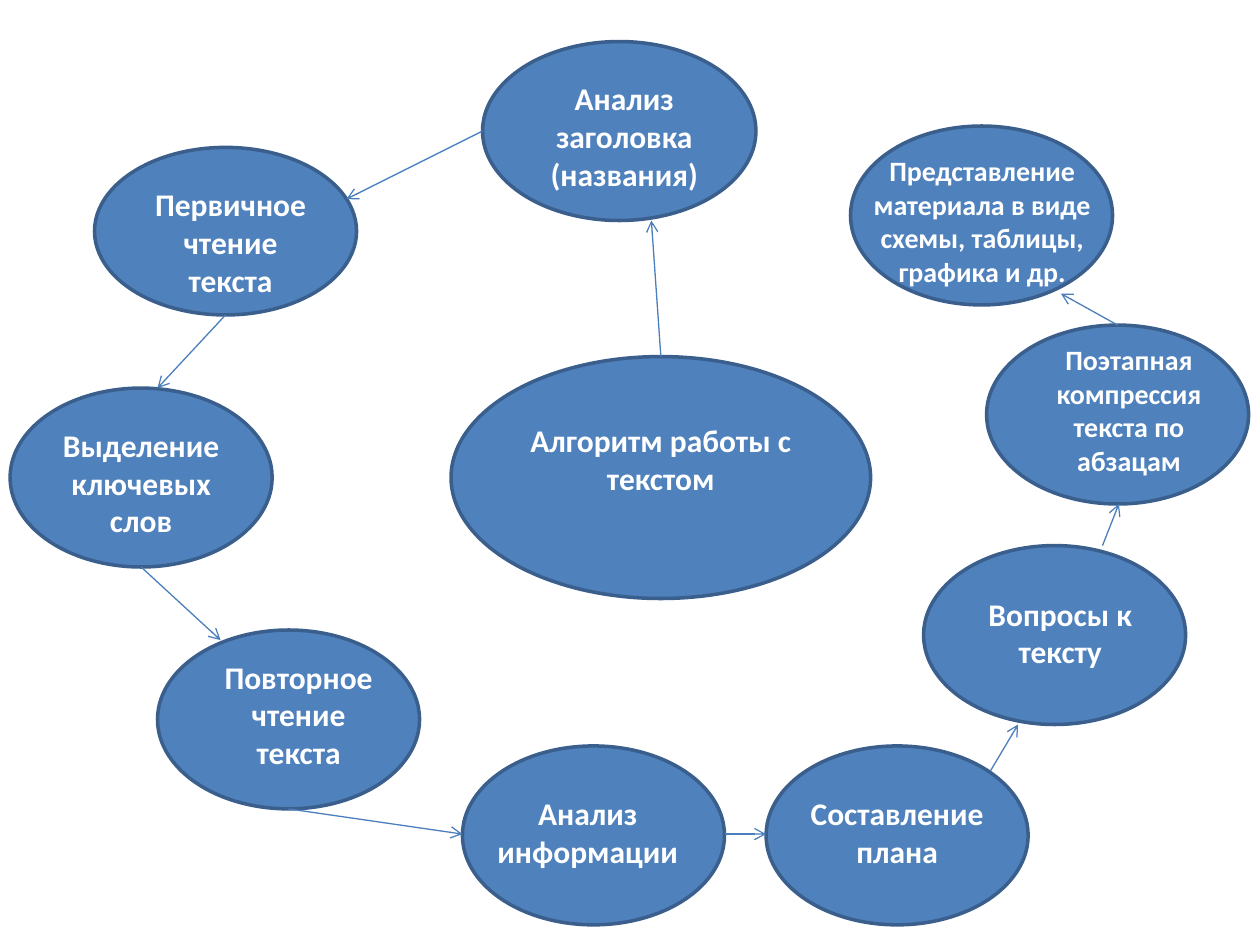
from dataclasses import dataclass

from lxml import etree
from pptx import Presentation
from pptx.dml.color import RGBColor
from pptx.enum.shapes import MSO_CONNECTOR as Connector, MSO_SHAPE as Shape
from pptx.enum.text import MSO_ANCHOR as Anchor, MSO_AUTO_SIZE as AutoSize, PP_ALIGN as Align
from pptx.oxml.ns import qn
from pptx.util import Inches, Pt


@dataclass(frozen=True)
class Theme:
    font: str = "Calibri"
    text: str = "FFFFFF"
    fill: str = "4F81BD"
    outline: str = "3A5F8C"
    arrow: str = "4B7EBC"
    outline_width: float = 2
    arrow_width: float = 0.75
    body: int = 18
    small: int = 16


class AlgorithmSlide:
    TOP_SITE = 0

    def __init__(self, deck, theme):
        self.theme = theme
        self.slide = deck.slides.add_slide(deck.slide_layouts[6])

    def _format(self, target, values):
        for name, value in values.items():
            setattr(target, name, value)

    def _stroke(self, line, color, width):
        line.color.rgb = RGBColor.from_string(color)
        line.width = Pt(width)

    def add_wording(self, frame, wording, size, **frame_format):
        self._format(frame, {"word_wrap": True, **frame_format})
        paragraph = frame.paragraphs[0]
        paragraph.alignment = Align.CENTER
        run = paragraph.add_run()
        run.text = wording
        self._format(run.font, {"name": self.theme.font, "size": Pt(size), "bold": True})
        run.font.color.rgb = RGBColor.from_string(self.theme.text)

    def ellipse(self, *box):
        oval = self.slide.shapes.add_shape(Shape.OVAL, *map(Inches, box))
        oval.shadow.inherit = False
        oval.fill.solid()
        oval.fill.fore_color.rgb = RGBColor.from_string(self.theme.fill)
        self._stroke(oval.line, self.theme.outline, self.theme.outline_width)
        return oval

    def label(self, wording, box, size):
        caption = self.slide.shapes.add_textbox(*map(Inches, box))
        self.add_wording(caption.text_frame, wording, size,
                         auto_size=AutoSize.SHAPE_TO_FIT_TEXT)

    def arrow(self, start, end, top_of=None):
        link = self.slide.shapes.add_connector(
            Connector.STRAIGHT, *map(Inches, (*start, *end)))
        if top_of is not None:
            link.begin_connect(top_of, self.TOP_SITE)
        self._stroke(link.line, self.theme.arrow, self.theme.arrow_width)
        properties = link._element.spPr
        etree.SubElement(properties.find(qn("a:ln")), qn("a:tailEnd"), type="arrow")
        etree.SubElement(properties, qn("a:effectLst"))


def main():
    theme = Theme()
    deck = Presentation()
    deck.slide_width, deck.slide_height = Inches(10), Inches(7.5)
    page = AlgorithmSlide(deck, theme)

    # Central topic, its text lifted by one line
    topic = page.ellipse(3.58, 2.83, 3.33, 1.92)
    page.add_wording(topic.text_frame, "Алгоритм работы с текстом", theme.body,
                     vertical_anchor=Anchor.MIDDLE, margin_bottom=Inches(0.35))

    # Steps: wording, ellipse position, label box, type size
    steps = [
        ("Анализ заголовка (названия)", (3.83, 0.33), (4.08, 0.58, 1.75, 1.01), theme.body),
        ("Первичное чтение текста", (0.75, 1.17), (1.08, 1.42, 1.5, 1.01), theme.body),
        ("Выделение ключевых слов", (0.08, 3.08), (0.33, 3.33, 1.58, 1.01), theme.body),
        ("Повторное чтение текста", (1.25, 5), (1.58, 5.17, 1.58, 1.01), theme.body),
        ("Анализ информации", (3.67, 5.92), (3.75, 6.25, 1.83, 0.71), theme.body),
        ("Составление плана", (6.08, 5.92), (6.33, 6.25, 1.58, 0.71), theme.body),
        ("Вопросы к тексту", (7.33, 4.33), (7.58, 4.67, 1.67, 0.71), theme.body),
        ("Поэтапная компрессия текста по абзацам", (7.83, 2.58),
         (8, 2.67, 1.92, 1.18), theme.small),
        ("Представление материала в виде схемы, таблицы, графика и др.", (6.75, 1),
         (6.67, 1.17, 2.25, 1.18), theme.small),
    ]
    usual_size = (2.08, 1.42)
    special_sizes = {0: (2.17, 1.42), 1: (2.08, 1.33)}
    ovals = [page.ellipse(*position, *special_sizes.get(index, usual_size))
             for index, (_, position, _, _) in enumerate(steps)]
    for wording, _, box, size in steps:
        page.label(wording, box, size)

    # Arrows from the topic through the steps in reading order
    compression = ovals[7]
    routes = [
        ((5.25, 2.83), (5.17, 1.75), topic),
        ((3.83, 1.04), (2.75, 1.58)),
        ((1.79, 2.5), (1.25, 3.08)),
        ((1.12, 4.5), (1.75, 5.08)),
        ((2.29, 6.42), (3.67, 6.62)),
        ((5.75, 6.62), (6.08, 6.62)),
        ((7.86, 6.12), (8.08, 5.75)),
        ((8.75, 4.33), (8.88, 4)),
        ((8.88, 2.58), (8.42, 2.33), compression),
    ]
    for route in routes:
        page.arrow(*route)

    deck.save("out.pptx")


if __name__ == "__main__":
    main()
